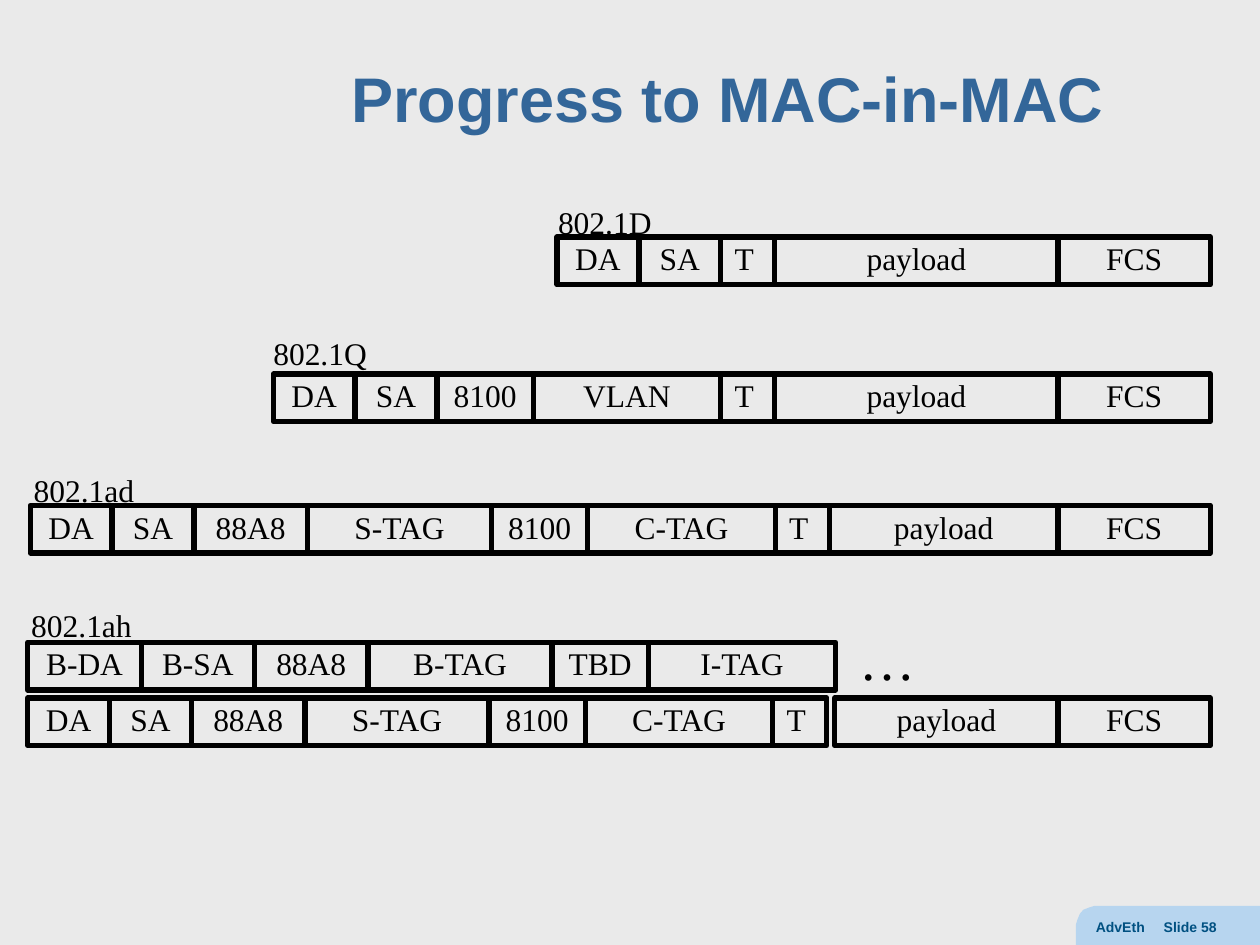
from lxml import etree
from pptx import Presentation
from pptx.dml.color import RGBColor as Rgb
from pptx.enum.shapes import MSO_SHAPE as Shape
from pptx.enum.text import MSO_ANCHOR as Anchor, PP_ALIGN as Align
from pptx.oxml.ns import qn
from pptx.util import Cm, Pt

HUES = {"back": "EAEAEA", "tab": "B7D5EF", "foot": "005081",
        "title": "336699", "ink": "000000"}
SERIF, SANS = "Times New Roman", "Arial"

RIGHT = 24.4
HIGH = 0.96
WIDE = {"DA": 1.65, "SA": 1.65, "B-DA": 2.29, "B-SA": 2.28,
        "8100": 1.94, "TBD": 1.94, "88A8": 2.29,
        "S-TAG": 3.71, "B-TAG": 3.71, "C-TAG": 3.78, "I-TAG": 3.78,
        "VLAN": 3.78, "T": 1.09, "FCS": 3.07}

# left, top, fields
ROWS = [
    (11.23, 4.78, "DA SA T payload FCS"),
    (5.51, 7.54, "DA SA 8100 VLAN T payload FCS"),
    (0.61, 10.19, "DA SA 88A8 S-TAG 8100 C-TAG T payload FCS"),
    (0.56, 12.95, "B-DA B-SA 88A8 B-TAG TBD I-TAG"),
    (0.56, 14.07, "DA SA 88A8 S-TAG 8100 C-TAG T"),
    (16.83, 14.07, "payload FCS"),
]

# text, left, top, width, height, size, top inset
NOTES = [
    ("802.1D", 11.0, 3.91, 2.44, 1.02, 18, 0.18),
    ("802.1Q", 5.26, 6.55, 2.44, 1.02, 18, 0.18),
    ("802.1ad", 0.43, 9.32, 2.82, 1.02, 18, 0.18),
    ("802.1ah", 0.38, 12.04, 2.82, 1.02, 18, 0.18),
    ("…", 17.07, 12.34, 4.09, 1.6, 32, 0.25),
]


def write(frame, text, size, hue="ink", face=SERIF, bold=False):
    frame.word_wrap = True
    para = frame.paragraphs[0]
    para.text = text
    font = para.font
    font.name, font.size, font.bold = face, Pt(size), bold
    font.color.rgb = Rgb.from_string(HUES[hue])
    return para


deck = Presentation()
deck.slide_width, deck.slide_height = Cm(25.4), Cm(19.05)
slide = deck.slides.add_slide(deck.slide_layouts[5])
shapes = slide.shapes
fill = slide.background.fill
fill.solid()
fill.fore_color.rgb = Rgb.from_string(HUES["back"])

# Footer tab with its rounded corner
edge = [(25.4, 19.05), (21.69, 19.05), (21.69, 18.64), (21.72, 18.54),
        (21.77, 18.42), (21.84, 18.34), (21.97, 18.29), (22.07, 18.26)]
pen = shapes.build_freeform(Cm(25.4), Cm(18.26))
pen.add_line_segments([(Cm(x), Cm(y)) for x, y in edge])
tab = pen.convert_to_shape()
tab.shadow.inherit = False
tab.fill.solid()
tab.fill.fore_color.rgb = Rgb.from_string(HUES["tab"])
tab.line.fill.background()

foot = shapes.add_textbox(Cm(21.84), Cm(18.39), Cm(3.53), Cm(0.64))
props = foot.text_frame.paragraphs[0]._p.get_or_add_pPr()
stops = etree.SubElement(props, qn("a:tabLst"))
etree.SubElement(stops, qn("a:tab"), pos=str(Cm(1.37)), algn="l")
write(foot.text_frame, "AdvEth\tSlide 58", 8, "foot", SANS, True)

title = shapes.title
title.left, title.top = Cm(5.38), Cm(0.46)
title.width, title.height = Cm(18.57), Cm(3.18)
title.text_frame.vertical_anchor = Anchor.MIDDLE
para = write(title.text_frame, "Progress to MAC-in-MAC", 36, "title", SANS, True)
para.alignment = Align.CENTER
para.line_spacing = 0.9

for left, top, names in ROWS:
    for name in names.split():
        # The payload takes all the room left before the FCS
        wide = WIDE.get(name, RIGHT - WIDE["FCS"] - left)
        cell = shapes.add_shape(Shape.RECTANGLE, Cm(left), Cm(top),
                                Cm(wide), Cm(HIGH))
        cell.shadow.inherit = False
        cell.fill.background()
        cell.line.color.rgb = Rgb.from_string(HUES["ink"])
        cell.line.width = Pt(3)
        frame = cell.text_frame
        frame.vertical_anchor = Anchor.TOP
        frame.margin_top = Cm(0.19)
        para = write(frame, "T " if name == "T" else name, 18)
        para.alignment = Align.CENTER
        para.line_spacing = 0.8
        left += wide

for text, left, top, wide, high, size, inset in NOTES:
    note = shapes.add_textbox(Cm(left), Cm(top), Cm(wide), Cm(high))
    note.text_frame.margin_top = Cm(inset)
    write(note.text_frame, text, size)

deck.save("out.pptx")
